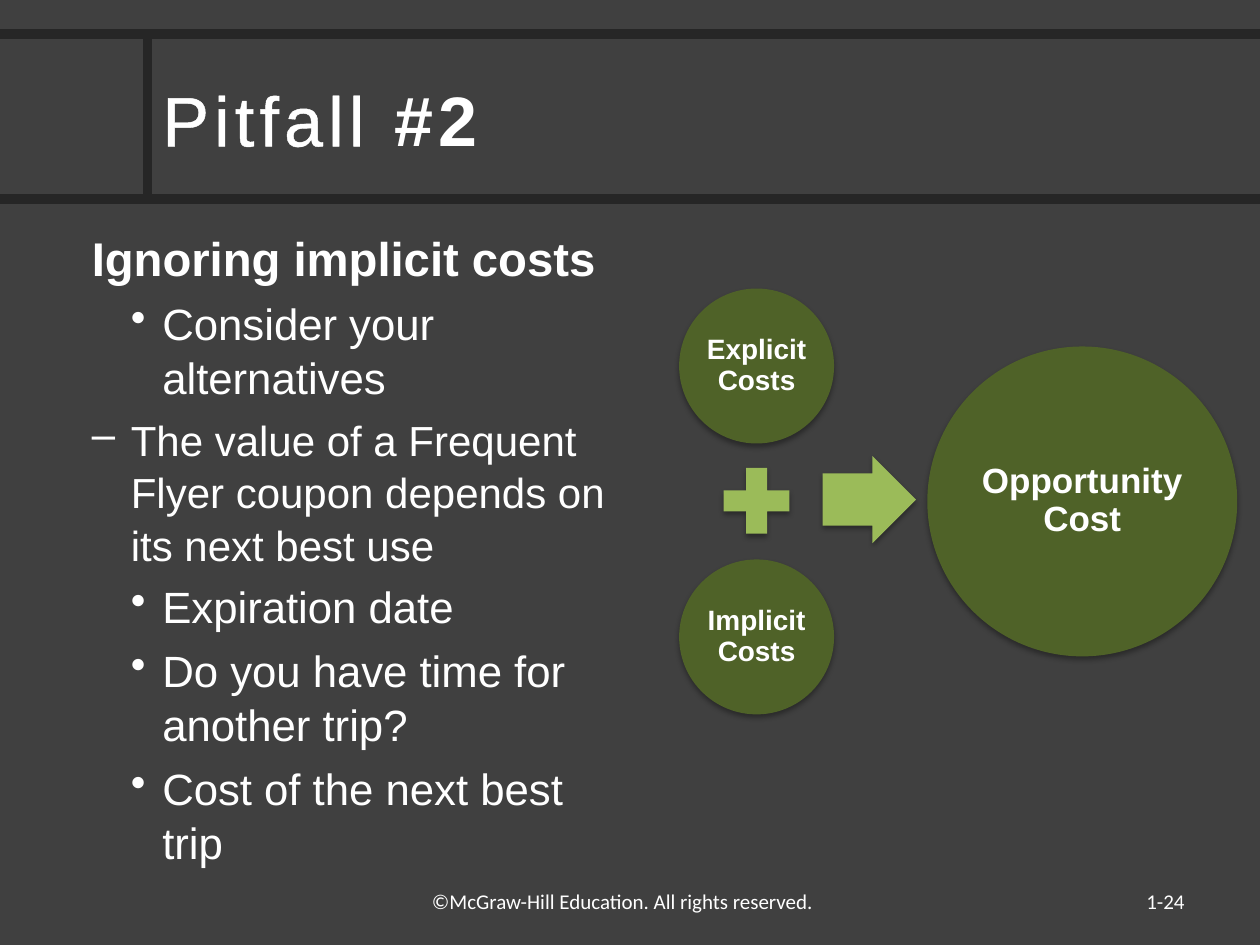
import dataclasses

import pptx
import pptx.dml.color
import pptx.enum.shapes
import pptx.enum.text
import pptx.oxml
import pptx.oxml.ns
import pptx.util

Inches, Pt = pptx.util.Inches, pptx.util.Pt
RGB = pptx.dml.color.RGBColor.from_string
Kind = pptx.enum.shapes.MSO_SHAPE
Align = pptx.enum.text.PP_ALIGN
Anchor = pptx.enum.text.MSO_ANCHOR
NS = pptx.oxml.ns.nsdecls("a")


@dataclasses.dataclass
class Theme:
    back: str = "404040"
    rule: str = "262626"
    text: str = "FFFFFF"
    ball: str = "4F6228"
    sign: str = "9BBB59"
    head: int = 40
    lead: int = 27
    item: int = 25
    dash: int = 24
    big: int = 20
    small: int = 16
    foot: int = 12


theme = Theme()


def add_run(para, text, size, name="Arial", bold=False):
    run = para.add_run()
    run.text = text
    form = {"size": Pt(size), "name": name, "bold": bold}
    for key, val in form.items():
        setattr(run.font, key, val)
    run.font.color.rgb = RGB(theme.text)
    return run


def add_box(left, top, width, height, anchor=Anchor.TOP):
    box = slide.shapes.add_textbox(
        Inches(left), Inches(top), Inches(width), Inches(height))
    box.text_frame.word_wrap = True
    box.text_frame.vertical_anchor = anchor
    return box.text_frame


deck = pptx.Presentation()
deck.slide_width, deck.slide_height = Inches(10), Inches(7.5)
slide = deck.slides.add_slide(deck.slide_layouts[6])
slide.background.fill.solid()
slide.background.fill.fore_color.rgb = RGB(theme.back)

# Header rules
for x1, y1, x2, y2 in [(0, 1.58, 10, 1.58), (1.17, 0.27, 1.17, 1.58),
                       (0, 0.27, 10, 0.27)]:
    line = slide.shapes.add_connector(
        pptx.enum.shapes.MSO_CONNECTOR.STRAIGHT,
        Inches(x1), Inches(y1), Inches(x2), Inches(y2))
    line.line.color.rgb = RGB(theme.rule)
    line.line.width = Pt(5.5)
    line._element.spPr.append(pptx.oxml.parse_xml(f"<a:effectLst {NS}/>"))

# Title
para = add_box(1.19, 0.3, 8.81, 1.28, Anchor.MIDDLE).paragraphs[0]
for text, bold in [("Pitfall", False), (" #2", True)]:
    run = add_run(para, text, theme.head, bold=bold)
    run.font._element.set("spc", "300")
    if not bold:
        run.font._element.insert(0, pptx.oxml.parse_xml(
            f'<a:ln {NS} w="{Pt(1.45)}"><a:solidFill>'
            f'<a:srgbClr val="{theme.text}"/></a:solidFill></a:ln>'))

# Body list: text, size, bullet, indent, hang
body = add_box(0.63, 1.75, 4.42, 4.95)
lead = (theme.lead, None, 0.31, 0.31)
item = (theme.item, "•", 0.56, 0.25)
dash = (theme.dash, "–", 0.31, 0.31)
rows = [
    ("Ignoring implicit costs", lead),
    ("Consider your alternatives", item),
    ("The value of a Frequent Flyer coupon depends on its next best use", dash),
    ("Expiration date", item),
    ("Do you have time for another trip?", item),
    ("Cost of the next best trip", item),
]
for row, (text, (size, mark, indent, hang)) in enumerate(rows):
    para = body.add_paragraph() if row else body.paragraphs[0]
    props = para._p.get_or_add_pPr()
    props.set("marL", str(Inches(indent)))
    props.set("indent", str(-Inches(hang)))
    if mark:
        props.append(pptx.oxml.parse_xml(f'<a:buChar {NS} char="{mark}"/>'))
    para.line_spacing = 1.04
    if row:
        para.space_before = Pt(5)
    add_run(para, text, size, bold=mark is None)

# Cost diagram: kind, place, fill, label, label size
parts = [
    (Kind.OVAL, (5.39, 2.29, 1.23, 1.23), theme.ball, "Explicit Costs", theme.small),
    (Kind.MATH_PLUS, (5.65, 3.62, 0.71, 0.71), theme.sign, None, None),
    (Kind.OVAL, (5.39, 4.44, 1.23, 1.23), theme.ball, "Implicit Costs", theme.small),
    (Kind.RIGHT_ARROW, (6.53, 3.62, 0.74, 0.69), theme.sign, None, None),
    (Kind.OVAL, (7.36, 2.75, 2.46, 2.46), theme.ball, "Opportunity Cost", theme.big),
]
for kind, place, fill, label, size in parts:
    shape = slide.shapes.add_shape(kind, *[Inches(val) for val in place])
    shape.fill.solid()
    shape.fill.fore_color.rgb = RGB(fill)
    shape.line.fill.background()
    shape.shadow.inherit = False
    shade = shape._element.spPr.find(pptx.oxml.ns.qn("a:effectLst"))
    shade.append(pptx.oxml.parse_xml(
        f'<a:outerShdw {NS} blurRad="{Pt(3.1)}" dist="{Pt(1.8)}" dir="5400000" '
        'rotWithShape="0"><a:srgbClr val="000000"><a:alpha val="35000"/>'
        '</a:srgbClr></a:outerShdw>'))
    if kind == Kind.RIGHT_ARROW:
        shape.adjustments[0] = 0.6
    if label:
        frame = shape.text_frame
        form = {"word_wrap": True, "vertical_anchor": Anchor.MIDDLE}
        for side in ("left", "top", "right", "bottom"):
            form[f"margin_{side}"] = Inches(0.02)
        for key, val in form.items():
            setattr(frame, key, val)
        para = frame.paragraphs[0]
        para.alignment = Align.CENTER
        para.line_spacing = 0.9
        add_run(para, label, size, bold=True)

# Footer and page number
para = add_box(3.33, 7, 3.33, 0.35).paragraphs[0]
add_run(para, "©McGraw-Hill Education. All rights reserved.", theme.foot, "Calibri")
para = add_box(7.17, 6.95, 2.33, 0.4, Anchor.MIDDLE).paragraphs[0]
para.alignment = Align.RIGHT
add_run(para, "1-24", theme.foot, "Calibri")

deck.save("out.pptx")
